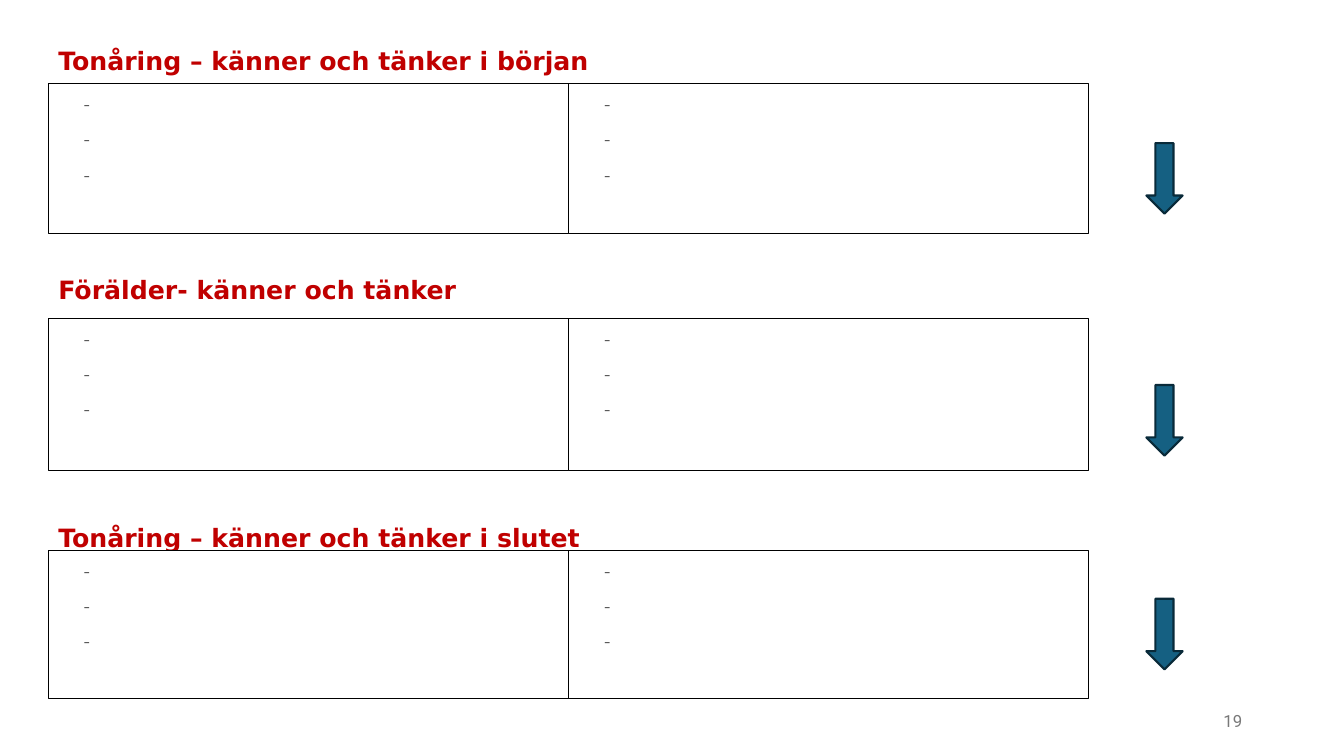
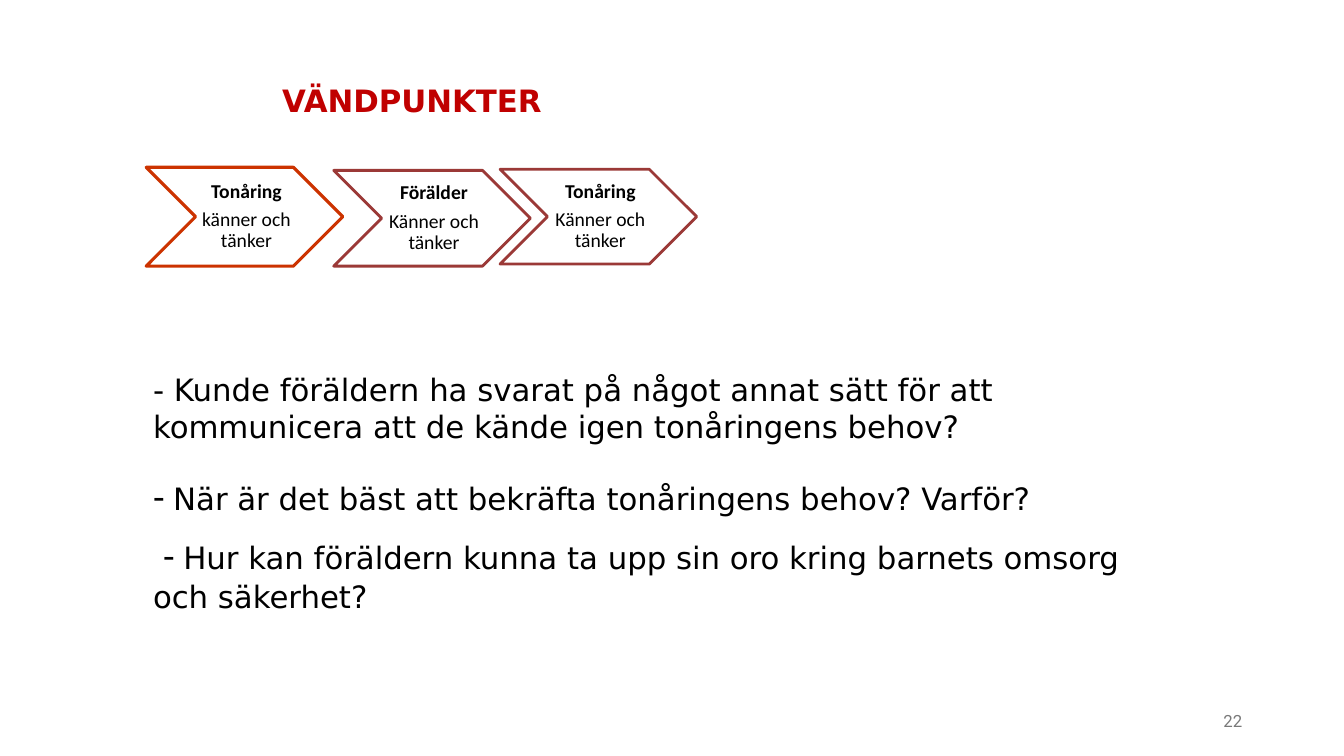
from dataclasses import dataclass

from pptx import Presentation
from pptx.dml.color import RGBColor
from pptx.enum import shapes, text
from pptx.util import Inches, Pt

KIND = shapes.MSO_SHAPE
ALIGN = text.PP_ALIGN
ANCHOR = text.MSO_ANCHOR


@dataclass(frozen=True)
class Theme:
    red: str = "C00000"
    black: str = "000000"
    white: str = "FFFFFF"
    dash: str = "595959"
    page: str = "797979"
    teal: str = "156082"
    navy: str = "092A39"
    orange: str = "CC3300"
    wine: str = "9B3937"
    main: str = "DejaVu Sans"
    label: str = "Calibri"
    serif: str = "Cambria"
    number: str = "Roboto"
    title: int = 22
    head: int = 18
    body: int = 22
    mark: int = 27
    note: int = 15
    step: int = 14
    foot: int = 12


T = Theme()

# heading, heading top, box top, box height, arrow top
ROWS = (
    ("Tonåring – känner och tänker i början", 0.4, 0.83, 1.49, 1.42),
    ("Förälder- känner och tänker", 2.67, 3.16, 1.51, 3.82),
    ("Tonåring – känner och tänker i slutet", 5.13, 5.46, 1.47, 5.94),
)
COLUMNS = (0.48, 5.64)

# who, what, left, top, height, line colour, line width
STEPS = (
    ("Tonåring", "känner och tänker", 1.45, 1.66, 0.98, T.orange, 2.25),
    ("Förälder", "Känner och tänker", 3.31, 1.69, 0.95, T.wine, 2),
    ("Tonåring", "Känner och tänker", 4.96, 1.68, 0.94, T.wine, 2),
)

# question, size and font of its dash, first-line indent
ASKS = (
    ("Kunde föräldern ha svarat på något annat sätt för att "
     "kommunicera att de kände igen tonåringens behov?", T.body, T.main, 0),
    ("När är det bäst att bekräfta tonåringens behov? Varför?",
     T.mark, T.label, 0),
    ("Hur kan föräldern kunna ta upp sin oro kring barnets omsorg "
     "och säkerhet?", T.mark, T.label, 0.1),
)


def style(font, size, name, color, bold=False):
    font.size = Pt(size)
    font.name = name
    font.color.rgb = RGBColor.from_string(color)
    font.bold = bold


def indent(para, left, first):
    props = para._p.get_or_add_pPr()
    props.set("marL", str(Inches(left)))
    props.set("indent", str(Inches(first)))


def lines(frame, items):
    """Yield one paragraph for each item, starting with the frame's first."""
    for i, item in enumerate(items):
        para = frame.add_paragraph() if i else frame.paragraphs[0]
        yield para, item


def add_box(slide, area):
    frame = slide.shapes.add_textbox(*map(Inches, area)).text_frame
    frame.word_wrap = True
    return frame


def add_label(slide, words, area, look, align=ALIGN.LEFT, anchor=ANCHOR.TOP):
    frame = add_box(slide, area)
    frame.vertical_anchor = anchor
    para = frame.paragraphs[0]
    para.text = words
    para.alignment = align
    style(para.font, *look)


def add_form(slide, kind, area, fill, line, width):
    form = slide.shapes.add_shape(kind, *map(Inches, area))
    form.shadow.inherit = False
    if fill:
        form.fill.solid()
        form.fill.fore_color.rgb = RGBColor.from_string(fill)
    else:
        form.fill.background()
    form.line.color.rgb = RGBColor.from_string(line)
    form.line.width = Pt(width)
    return form


def add_notes(slide, area):
    """Add a framed field with three dashes to write after."""
    form = add_form(slide, KIND.RECTANGLE, area, T.white, T.black, 0.75)
    frame = form.text_frame
    frame.vertical_anchor = ANCHOR.TOP
    for para, dash in lines(frame, "---"):
        para.text = dash
        para.alignment = ALIGN.LEFT
        para.line_spacing = 1.07
        para.space_after = Pt(6)
        indent(para, 0.5, -0.25)
        style(para.font, T.note, T.serif, T.dash)


def add_step(slide, who, what, left, top, high, color, width):
    form = add_form(slide, KIND.CHEVRON, (left, top, 1.95, high),
                    None, color, width)
    frame = form.text_frame
    frame.word_wrap = True
    frame.vertical_anchor = ANCHOR.MIDDLE
    frame.margin_left = Inches(0.06)
    frame.margin_right = frame.margin_top = frame.margin_bottom = Inches(0.02)
    for para, words in lines(frame, (who, what)):
        para.text = words
        para.alignment = ALIGN.CENTER
        para.line_spacing = 0.9
        para.space_after = Pt(5)
        style(para.font, T.step, T.label, T.black, words == who)


def add_asks(slide):
    frame = add_box(slide, (0.92, 3.63, 10.8, 2.54))
    for para, (words, size, name, first) in lines(frame, ASKS):
        indent(para, 0.5, first)
        if not first:
            para.space_before = para.space_after = Pt(10)
        for part, look in (("- ", (size, name)), (words, (T.body, T.main))):
            run = para.add_run()
            run.text = part
            style(run.font, *look, T.black)


def add_slide(deck, page):
    slide = deck.slides.add_slide(deck.slide_layouts[6])
    add_label(slide, str(page), (9.42, 6.95, 3, 0.4),
              (T.foot, T.number, T.page), ALIGN.RIGHT, ANCHOR.MIDDLE)
    return slide


def add_grid(deck):
    slide = add_slide(deck, 19)
    for head, y, top, high, tip in ROWS:
        add_label(slide, head, (0.48, y, 6.67, 0.4),
                  (T.head, T.main, T.red, True))
        for left in COLUMNS:
            add_notes(slide, (left, top, 5.16, high))
        add_form(slide, KIND.DOWN_ARROW, (11.37, tip, 0.36, 0.7),
                 T.teal, T.navy, 1.5)


def add_turns(deck):
    slide = add_slide(deck, 22)
    add_label(slide, "VÄNDPUNKTER", (2.7, 0.74, 4, 0.5),
              (T.title, T.main, T.red, True), anchor=ANCHOR.MIDDLE)
    for step in STEPS:
        add_step(slide, *step)
    add_asks(slide)


def main():
    deck = Presentation()
    deck.slide_width = Inches(13.33)
    deck.slide_height = Inches(7.5)
    add_grid(deck)
    add_turns(deck)
    deck.save("out.pptx")


if __name__ == "__main__":
    main()
